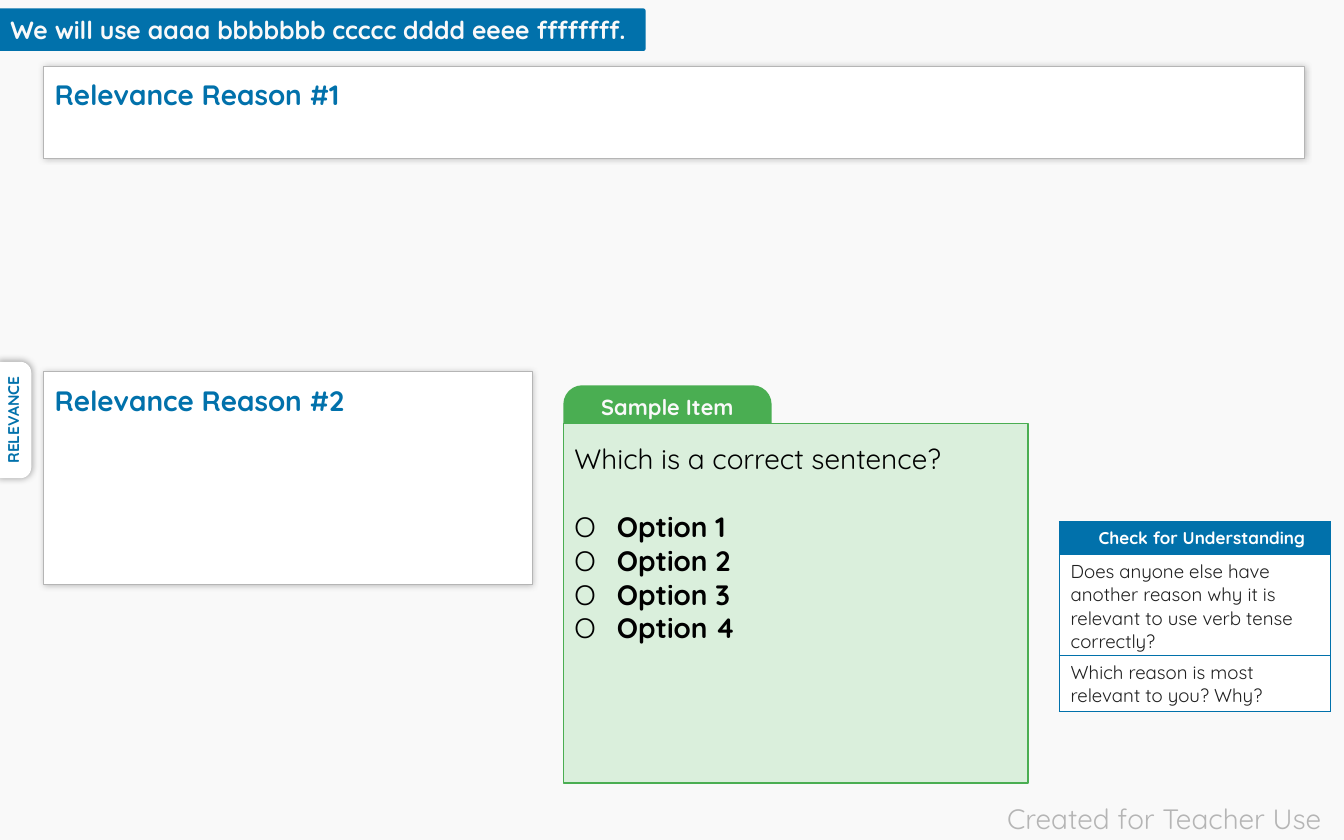
from dataclasses import dataclass

from lxml.etree import SubElement
from pptx import Presentation
from pptx.dml.color import RGBColor
from pptx.enum.shapes import MSO_SHAPE as Shape
from pptx.enum.text import MSO_ANCHOR as Anchor, PP_ALIGN as Align
from pptx.oxml.ns import qn
from pptx.util import Inches, Pt


@dataclass(frozen=True)
class Theme:
    font: str = "Quicksand"
    background: str = "F9F9F9"
    blue: str = "0171AB"
    green: str = "4AAE52"
    pale_green: str = "DAEFDC"
    white: str = "FFFFFF"
    gray: str = "B5B5B5"
    ink: str = "202020"
    black: str = "000000"
    shadow: str = "5A5A5A"
    heading: float = 18
    banner: float = 16
    tab: float = 14
    body: float = 12
    caption: float = 11
    label: float = 10


def color(value):
    return RGBColor.from_string(value)


class SlideBuilder:
    def __init__(self, slide, theme):
        self.slide = slide
        self.theme = theme
        slide.background.fill.solid()
        slide.background.fill.fore_color.rgb = color(theme.background)

    def add_run(self, paragraph, text, size, tint, bold=False):
        run = paragraph.add_run()
        run.text = text
        font = run.font
        font.name, font.size, font.bold = self.theme.font, Pt(size), bold
        font.color.rgb = color(tint)

    def frame(self, shape, anchor=Anchor.TOP, margins=(0.1, 0.05, 0.1, 0.05)):
        frame = shape.text_frame
        frame.word_wrap = True
        frame.vertical_anchor = anchor
        (frame.margin_left, frame.margin_top,
         frame.margin_right, frame.margin_bottom) = map(Inches, margins)
        return frame

    def label(self, shape, text, size, tint, bold=False, align=Align.LEFT, **layout):
        paragraph = self.frame(shape, **layout).paragraphs[0]
        paragraph.alignment = align
        self.add_run(paragraph, text, size, tint, bold)

    def shape(self, kind, box, fill, line=None, width=1, adjustments=()):
        shape = self.slide.shapes.add_shape(kind, *map(Inches, box))
        shape.shadow.inherit = False
        shape.fill.solid()
        shape.fill.fore_color.rgb = color(fill)
        if line:
            shape.line.color.rgb = color(line)
            shape.line.width = Pt(width)
        else:
            shape.line.fill.background()
        for index, value in enumerate(adjustments):
            shape.adjustments[index] = value
        return shape

    def glow(self, shape, tint, blur):
        effects = shape._element.spPr.find(qn("a:effectLst"))
        shadow = SubElement(effects, qn("a:outerShdw"), blurRad=str(Pt(blur)),
                            dist="0", dir="0", algn="ctr", rotWithShape="0")
        shade = SubElement(shadow, qn("a:srgbClr"), val=tint)
        SubElement(shade, qn("a:alpha"), val="40000")

    def text_box(self, box):
        return self.slide.shapes.add_textbox(*map(Inches, box))

    def banner(self, text):
        theme = self.theme
        shape = self.shape(Shape.ROUND_2_SAME_RECTANGLE, (2.69, -2.62, 0.38, 5.77),
                           theme.blue, adjustments=(0, 0.055))
        shape.rotation = 270
        self.label(shape, text, theme.banner, theme.background, True, margins=(0.05,) * 4)
        shape.text_frame._txBody.bodyPr.set("vert", "vert")

    def side_tab(self, text):
        theme = self.theme
        shape = self.shape(Shape.ROUND_2_SAME_RECTANGLE, (-0.39, 3.6, 1.04, 0.3),
                           theme.white, adjustments=(0, 0.33))
        shape.rotation = 270
        self.glow(shape, theme.black, 5)
        self.label(shape, text, theme.label, theme.blue, True, Align.CENTER,
                   anchor=Anchor.MIDDLE)

    def reason(self, text, box):
        theme = self.theme
        shape = self.shape(Shape.RECTANGLE, box, theme.white, theme.gray, 0.5)
        self.glow(shape, theme.shadow, 4)
        self.label(shape, text, theme.heading, theme.blue, True, margins=(0.1, 0.1, 0.1, 0))

    def sample_item(self, title, question, options, left, top, width, height):
        theme = self.theme
        tab_height = 0.34
        self.shape(Shape.RECTANGLE, (left, top, width, height), theme.pale_green, theme.green)
        tab = self.shape(Shape.ROUND_2_SAME_RECTANGLE,
                         (left, top - tab_height, 1.86, tab_height),
                         theme.green, adjustments=(0.5, 0))
        self.label(tab, title, theme.tab, theme.background, True, Align.CENTER,
                   anchor=Anchor.MIDDLE)
        box = self.text_box((left, top + 0.11, width, 1.92))
        self.label(box, question, theme.heading, theme.black)
        for index, option in enumerate(options):
            paragraph = box.text_frame.add_paragraph()
            properties = paragraph._p.get_or_add_pPr()
            properties.set("marL", str(Inches(0.38)))
            properties.set("indent", str(Inches(-0.38)))
            if index == 0:
                paragraph.space_before = Pt(theme.heading * 1.25)
            self.add_run(paragraph, "O\t", theme.heading, theme.black)
            self.add_run(paragraph, option, theme.heading, theme.black, True)

    def cell_borders(self, cell):
        properties = cell._tc.get_or_add_tcPr()
        for position, side in enumerate(("lnL", "lnR", "lnT", "lnB")):
            line = properties.makeelement(qn(f"a:{side}"), {"w": str(Pt(1))})
            fill = SubElement(line, qn("a:solidFill"))
            SubElement(fill, qn("a:srgbClr"), val=self.theme.blue)
            properties.insert(position, line)

    def check_table(self, title, questions, left, top, width, heights):
        theme = self.theme
        table = self.slide.shapes.add_table(
            len(heights), 1, *map(Inches, (left, top, width, sum(heights)))).table
        table.first_row = table.horz_banding = False
        for index, (text, height) in enumerate(zip((title, *questions), heights)):
            header = index == 0
            table.rows[index].height = Inches(height)
            cell = table.cell(index, 0)
            cell.fill.solid()
            cell.fill.fore_color.rgb = color(theme.blue if header else theme.white)
            self.cell_borders(cell)
            paragraph = cell.text_frame.paragraphs[0]
            if header:
                paragraph._p.get_or_add_pPr().set("marL", str(Inches(0.25)))
                self.add_run(paragraph, text, theme.caption, theme.white, True)
            else:
                self.add_run(paragraph, text, theme.body, theme.ink)

    def footer(self, text):
        self.label(self.text_box((8.79, 7.11, 3.21, 0.4)), text, self.theme.heading,
                   self.theme.gray, align=Align.CENTER)


def main():
    presentation = Presentation()
    presentation.slide_width, presentation.slide_height = Inches(12), Inches(7.5)
    slide = presentation.slides.add_slide(presentation.slide_layouts[6])
    builder = SlideBuilder(slide, Theme())
    builder.footer("Created for Teacher Use")
    builder.banner("We will use aaaa bbbbbbb ccccc dddd eeee ffffffff.")
    builder.side_tab("RELEVANCE")
    builder.check_table(
        "Check for Understanding",
        ("Does anyone else have another reason why it is relevant to use verb tense correctly?",
         "Which reason is most relevant to you? Why?"),
        9.46, 4.66, 2.42, (0.29, 0.9, 0.5))
    builder.reason("Relevance Reason #1", (0.39, 0.59, 11.26, 0.82))
    builder.sample_item("Sample Item", "Which is a correct sentence?",
                        [f"Option {number}" for number in range(1, 5)],
                        5.03, 3.78, 4.15, 3.21)
    builder.reason("Relevance Reason #2", (0.39, 3.32, 4.36, 1.9))
    presentation.save("out.pptx")


if __name__ == "__main__":
    main()
